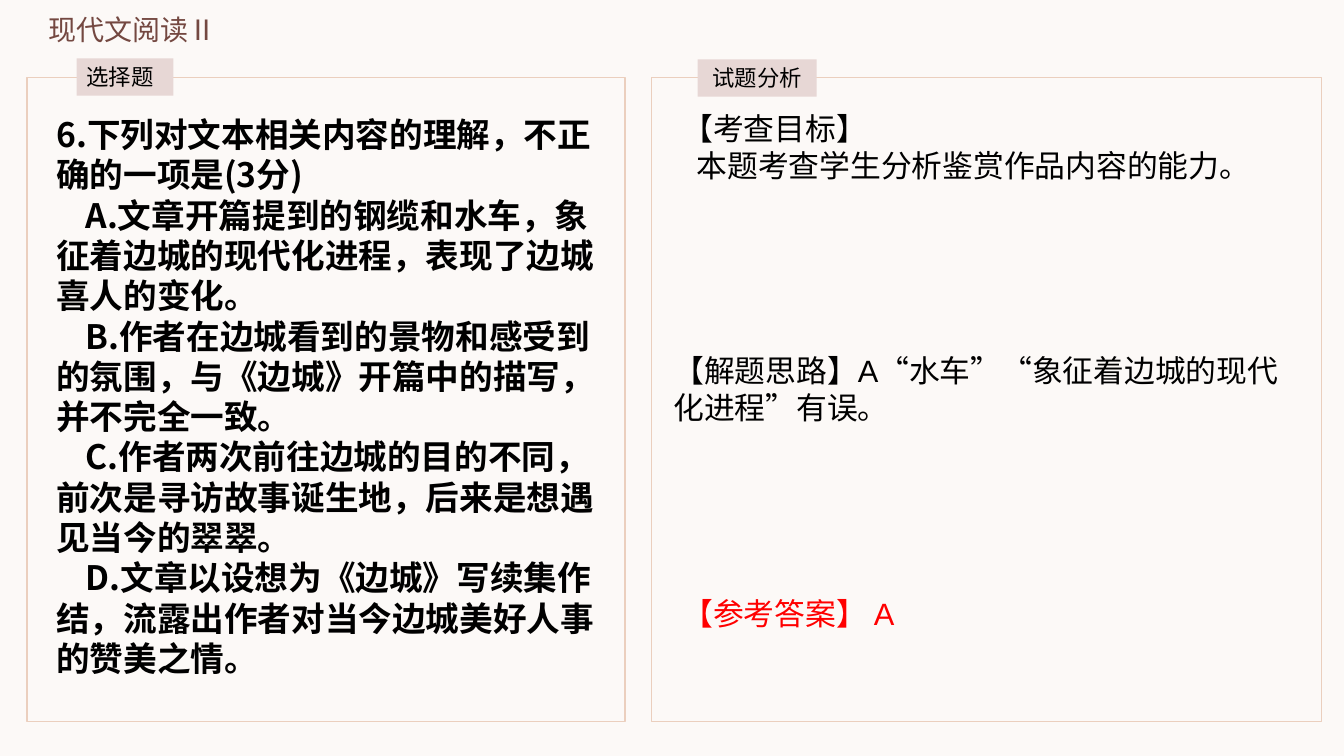
from lxml import etree
from pptx import Presentation
from pptx import util as u
from pptx.dml.color import RGBColor
from pptx.enum import shapes, text
from pptx.oxml import ns

CREAM = RGBColor(0xFC, 0xF9, 0xF7)
PEACH = RGBColor(0xEB, 0xCF, 0xBE)
ROSE = RGBColor(0xE7, 0xD7, 0xD5)
BROWN = RGBColor(0x74, 0x48, 0x41)
BLACK = RGBColor(0, 0, 0)
RED = RGBColor(0xFF, 0, 0)
CJK = "Noto Sans CJK SC"
LATIN = "Arial"
LINE_HEIGHT = 1.2

QUESTION = "6.下列对文本相关内容的理解，不正确的一项是(3分)"
OPTIONS = [
    "A.文章开篇提到的钢缆和水车，象征着边城的现代化进程，表现了边城喜人的变化。",
    "B.作者在边城看到的景物和感受到的氛围，与《边城》开篇中的描写，并不完全一致。",
    "C.作者两次前往边城的目的不同，前次是寻访故事诞生地，后来是想遇见当今的翠翠。",
    "D.文章以设想为《边城》写续集作结，流露出作者对当今边城美好人事的赞美之情。",
]


def write(shape, lines, size, font=LATIN, color=BLACK, bold=False,
          indent=0, align=text.PP_ALIGN.LEFT):
    frame = shape.text_frame
    frame.text = "\n".join(lines)
    frame.word_wrap = True
    frame.auto_size = text.MSO_AUTO_SIZE.NONE
    frame.vertical_anchor = text.MSO_ANCHOR.TOP
    for index, paragraph in enumerate(frame.paragraphs):
        paragraph.alignment = align
        paragraph.line_spacing = u.Pt(size * LINE_HEIGHT)
        paragraph.space_before = u.Pt(0)
        if index and indent:
            paragraph._p.get_or_add_pPr().set("indent", str(u.Inches(indent)))
        for run in paragraph.runs:
            run.font.size = u.Pt(size)
            run.font.bold = bold
            run.font.name = font
            run.font.color.rgb = color
            east_asian = etree.Element(ns.qn("a:ea"), typeface=CJK)
            run.font._element.find(ns.qn("a:latin")).addnext(east_asian)


def add_rectangle(slide, left, top, width, height):
    shape = slide.shapes.add_shape(
        shapes.MSO_SHAPE.RECTANGLE, u.Inches(left), u.Inches(top),
        u.Inches(width), u.Inches(height))
    shape.shadow.inherit = False
    return shape


def add_panel(slide, left, width):
    panel = add_rectangle(slide, left, 0.77, width, 6.39)
    panel.fill.background()
    panel.line.color.rgb = PEACH
    panel.line.width = u.Pt(1)


def add_tag(slide, left, top, width, label, **style):
    tag = add_rectangle(slide, left, top, width, 0.37)
    tag.fill.solid()
    tag.fill.fore_color.rgb = ROSE
    tag.line.fill.background()
    write(tag, [label], 16, **style)


def add_text(slide, left, top, width, height, lines, size, **style):
    box = slide.shapes.add_textbox(
        u.Inches(left), u.Inches(top), u.Inches(width), u.Inches(height))
    write(box, lines, size, **style)


def set_title(slide, label):
    title = slide.shapes.title
    title.left, title.top = u.Inches(0.38), u.Inches(0.07)
    title.width, title.height = u.Inches(2.34), u.Inches(0.44)
    write(title, [label], 20, font=CJK, color=BROWN)


def main():
    presentation = Presentation()
    presentation.slide_width = u.Inches(13.33)
    presentation.slide_height = u.Inches(7.5)
    slide = presentation.slides.add_slide(presentation.slide_layouts[5])
    slide.background.fill.solid()
    slide.background.fill.fore_color.rgb = CREAM

    set_title(slide, "现代文阅读Ⅱ")

    add_panel(slide, 0.27, 5.93)
    add_tag(slide, 0.76, 0.58, 0.96, "选择题", font=CJK)
    add_text(slide, 0.46, 1.08, 5.56, 5.75, [QUESTION, *OPTIONS], 24,
             font=CJK, bold=True, indent=0.29)

    add_panel(slide, 6.46, 6.65)
    add_tag(slide, 6.92, 0.59, 1.18, "试题分析", align=text.PP_ALIGN.CENTER)
    add_text(slide, 6.67, 1.04, 6.08, 1.21,
             ["【考查目标】", "本题考查学生分析鉴赏作品内容的能力。"], 22, indent=0.14)
    add_text(slide, 6.58, 3.44, 6.43, 1.21,
             ["【解题思路】A“水车”“象征着边城的现代化进程”有误。"], 22)
    add_text(slide, 6.67, 5.85, 6.35, 0.47, ["【参考答案】 A"], 22, color=RED)

    presentation.save("out.pptx")


if __name__ == "__main__":
    main()
